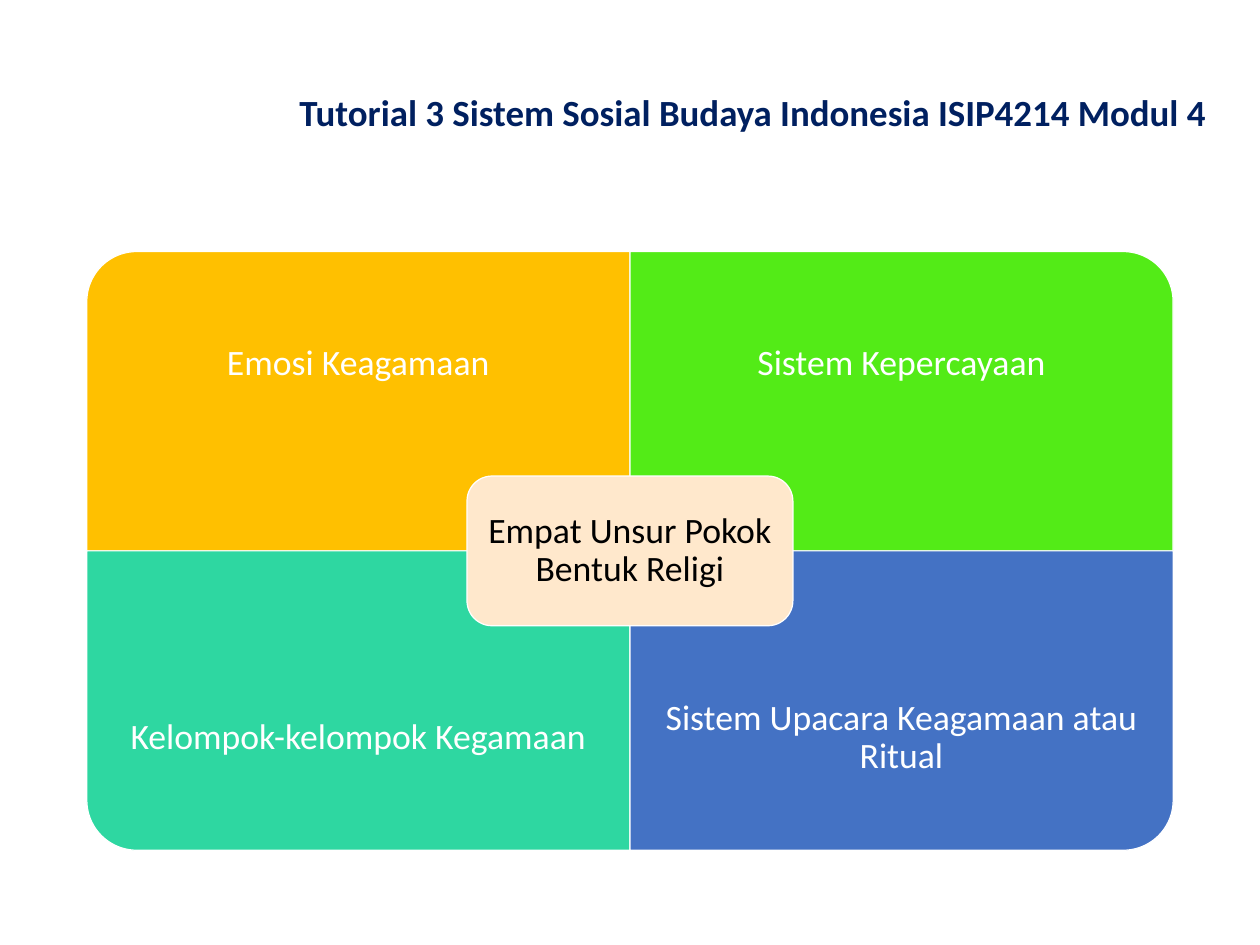
from pptx import Presentation
from pptx.dml.color import RGBColor
from pptx.enum.shapes import MSO_SHAPE as Shape
from pptx.enum.text import MSO_ANCHOR as Anchor, PP_ALIGN as Align
from pptx.util import Inches, Pt

WIDTH, HEIGHT = 14.22, 10.67
FONT = "Calibri"
WHITE = RGBColor(0xFF, 0xFF, 0xFF)
BLACK = RGBColor(0x00, 0x00, 0x00)
NAVY = RGBColor(0x00, 0x20, 0x60)
AMBER = RGBColor(0xFF, 0xC0, 0x00)
GREEN = RGBColor(0x53, 0xEB, 0x17)
TEAL = RGBColor(0x2E, 0xD7, 0xA1)
BLUE = RGBColor(0x44, 0x72, 0xC4)
CREAM = RGBColor(0xFF, 0xE8, 0xCC)

# Column, row, rotation that turns the round corner outwards, fill, label
QUADRANTS = [
    (0, 0, 270, AMBER, "Emosi Keagamaan"),
    (1, 0, 0, GREEN, "Sistem Kepercayaan"),
    (0, 1, 180, TEAL, "Kelompok-kelompok Kegamaan"),
    (1, 1, 90, BLUE, "Sistem Upacara Keagamaan atau Ritual"),
]


def add_text(page, box, words, size, color, inset=(0.1, 0.05), align=Align.CENTER, bold=False):
    label = page.shapes.add_textbox(*map(Inches, box))
    frame = label.text_frame
    frame.word_wrap = True
    frame.vertical_anchor = Anchor.MIDDLE
    frame.margin_left = frame.margin_right = Inches(inset[0])
    frame.margin_top = frame.margin_bottom = Inches(inset[1])
    para = frame.paragraphs[0]
    para.alignment = align
    para.line_spacing = 0.9
    span = para.add_run()
    span.text = words
    span.font.name = FONT
    span.font.size = Pt(size)
    span.font.bold = bold
    span.font.color.rgb = color


def add_panel(page, kind, box, fill, rotation=0):
    left, top, width, height = box
    # A quarter turn swaps the sides around the same centre
    if rotation % 180:
        left, top = left + (width - height) / 2, top + (height - width) / 2
        width, height = height, width
    panel = page.shapes.add_shape(kind, *map(Inches, (left, top, width, height)))
    panel.rotation = rotation
    panel.shadow.inherit = False
    panel.fill.solid()
    panel.fill.fore_color.rgb = fill
    panel.line.color.rgb = WHITE
    panel.line.width = Pt(1)


def add_title(page, box):
    add_text(page, box, "Tutorial 3 Sistem Sosial Budaya Indonesia ISIP4214 Modul 4",
             30, NAVY, align=Align.LEFT, bold=True)


def add_matrix(page, box):
    left, top, width, height = box
    cell_width, cell_height = width / 2, height / 2

    # Four quadrants, each label in the outer three quarters
    for column, row, rotation, fill, words in QUADRANTS:
        x, y = left + column * cell_width, top + row * cell_height
        add_panel(page, Shape.ROUND_1_RECTANGLE, (x, y, cell_width, cell_height), fill, rotation)
        label_box = (x, y + row * cell_height / 4, cell_width, cell_height * 3 / 4)
        add_text(page, label_box, words, 29, WHITE, (0.23, 0.23))

    # Centre card
    card_width, card_height = cell_width * 0.6, cell_height / 2
    x, y = left + (width - card_width) / 2, top + (height - card_height) / 2
    add_panel(page, Shape.ROUNDED_RECTANGLE, (x, y, card_width, card_height), CREAM)
    pad = 0.08
    add_text(page, (x + pad, y + pad, card_width - 2 * pad, card_height - 2 * pad),
             "Empat Unsur Pokok Bentuk Religi", 29, BLACK, (0.12, 0.12))


def main():
    deck = Presentation()
    deck.slide_width, deck.slide_height = Inches(WIDTH), Inches(HEIGHT)
    page = deck.slides.add_slide(deck.slide_layouts[6])
    add_matrix(page, (0.98, 2.84, 12.26, 6.76))
    add_title(page, (3.28, 0.67, WIDTH - 3.28, 1.25))
    deck.save("out.pptx")


if __name__ == "__main__":
    main()
